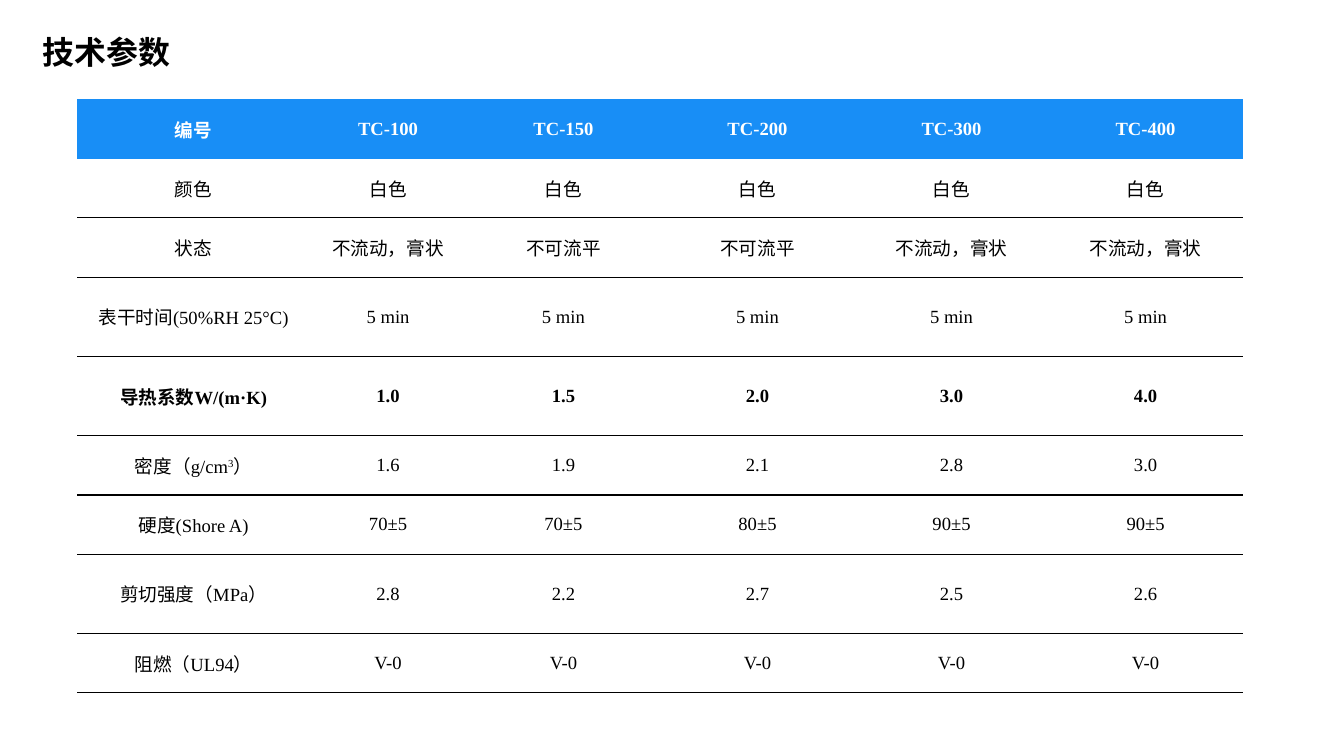
"""Build the technical parameters slide with its comparison table."""
from dataclasses import dataclass

from lxml import etree
from pptx import Presentation
from pptx import util as u
from pptx.dml.color import RGBColor
from pptx.enum import text
from pptx.oxml import ns


@dataclass(frozen=True)
class Theme:
    ink: str = "000000"
    header_fill: str = "188EF6"
    header_ink: str = "FFFFFF"
    title_font: str = "Noto Sans CJK SC"
    table_font: str = "Times New Roman"
    title_size: int = 24
    table_size: int = 14
    rule_width: int = 1


@dataclass(frozen=True)
class Parameter:
    label: str
    values: tuple[str, ...]
    tall: bool = False
    bold: bool = False


THEME = Theme()
SUPERSCRIPT = "^"
ROW_HEIGHT, TALL_HEIGHT = 0.62, 0.83
COLUMN_WIDTHS = [2.43, 1.64] + [2.03] * 4
PASTE, LEVEL = "不流动，膏状", "不可流平"
PARAMETERS = [
    Parameter("编号", ("TC-100", "TC-150", "TC-200", "TC-300", "TC-400"), bold=True),
    Parameter("颜色", ("白色",) * 5),
    Parameter("状态", (PASTE, LEVEL, LEVEL, PASTE, PASTE)),
    Parameter("表干时间(50%RH 25°C)", ("5 min",) * 5, tall=True),
    Parameter("导热系数W/(m·K)", ("1.0", "1.5", "2.0", "3.0", "4.0"), tall=True, bold=True),
    Parameter("密度（g/cm^3^）", ("1.6", "1.9", "2.1", "2.8", "3.0")),
    Parameter("硬度(Shore A)", ("70±5", "70±5", "80±5", "90±5", "90±5")),
    Parameter("剪切强度（MPa）", ("2.8", "2.2", "2.7", "2.5", "2.6"), tall=True),
    Parameter("阻燃（UL94）", ("V-0",) * 5),
]


def style_paragraph(p, font: str, size: int, color: str, bold: bool) -> None:
    """Set the font of a whole paragraph."""
    p.font.name = font
    p.font.size = u.Pt(size)
    p.font.bold = bold
    p.font.color.rgb = RGBColor.from_string(color)


def set_borders(cell, top: bool, bottom: bool) -> None:
    """Rule the chosen horizontal edges of a cell and clear the others."""
    tc_pr = cell._tc.get_or_add_tcPr()
    edges = {"a:lnL": False, "a:lnR": False, "a:lnT": top, "a:lnB": bottom}
    for index, (tag, ruled) in enumerate(edges.items()):
        ln = etree.Element(ns.qn(tag), w=str(u.Pt(THEME.rule_width)))
        if ruled:
            fill = etree.SubElement(ln, ns.qn("a:solidFill"))
            etree.SubElement(fill, ns.qn("a:srgbClr"), val=THEME.ink)
        else:
            etree.SubElement(ln, ns.qn("a:noFill"))
        tc_pr.insert(index, ln)


def fill_cell(cell, content: str, row: int, bold: bool) -> None:
    """Write one table cell with its fill, text and borders."""
    header = row == 0
    if header:
        cell.fill.solid()
        cell.fill.fore_color.rgb = RGBColor.from_string(THEME.header_fill)
    else:
        cell.fill.background()
    cell.vertical_anchor = text.MSO_ANCHOR.MIDDLE
    p = cell.text_frame.paragraphs[0]
    p.alignment = text.PP_ALIGN.CENTER
    color = THEME.header_ink if header else THEME.ink
    style_paragraph(p, THEME.table_font, THEME.table_size, color, bold)
    for index, part in enumerate(content.split(SUPERSCRIPT)):
        r = p.add_run()
        r.text = part
        if index % 2:
            r._r.get_or_add_rPr().set("baseline", "30000")
    set_borders(cell, top=row > 1, bottom=not header)


def add_title(s, title: str) -> None:
    """Add the slide title."""
    sp = s.shapes.add_textbox(u.Inches(0.35), u.Inches(0.29), u.Inches(1.56), u.Inches(0.5))
    tf = sp.text_frame
    tf.word_wrap = False
    tf.auto_size = text.MSO_AUTO_SIZE.SHAPE_TO_FIT_TEXT
    p = tf.paragraphs[0]
    p.add_run().text = title
    style_paragraph(p, THEME.title_font, THEME.title_size, THEME.ink, True)


def add_parameter_table(s, parameters: list[Parameter]) -> None:
    """Add the table with one row per parameter."""
    heights = [TALL_HEIGHT if item.tall else ROW_HEIGHT for item in parameters]
    table = s.shapes.add_table(
        len(heights), len(COLUMN_WIDTHS), u.Inches(0.81), u.Inches(1.04),
        u.Inches(sum(COLUMN_WIDTHS)), u.Inches(sum(heights)),
    ).table
    table.horz_banding = False
    for column, width in zip(table.columns, COLUMN_WIDTHS):
        column.width = u.Inches(width)
    for row, (item, height) in enumerate(zip(parameters, heights)):
        table.rows[row].height = u.Inches(height)
        for column, content in enumerate((item.label, *item.values)):
            fill_cell(table.cell(row, column), content, row, item.bold)


def main() -> None:
    """Build and save the presentation."""
    prs = Presentation()
    prs.slide_width, prs.slide_height = u.Inches(14.06), u.Inches(7.91)
    s = prs.slides.add_slide(prs.slide_layouts[6])
    add_title(s, "技术参数")
    add_parameter_table(s, PARAMETERS)
    prs.save("out.pptx")


if __name__ == "__main__":
    main()
